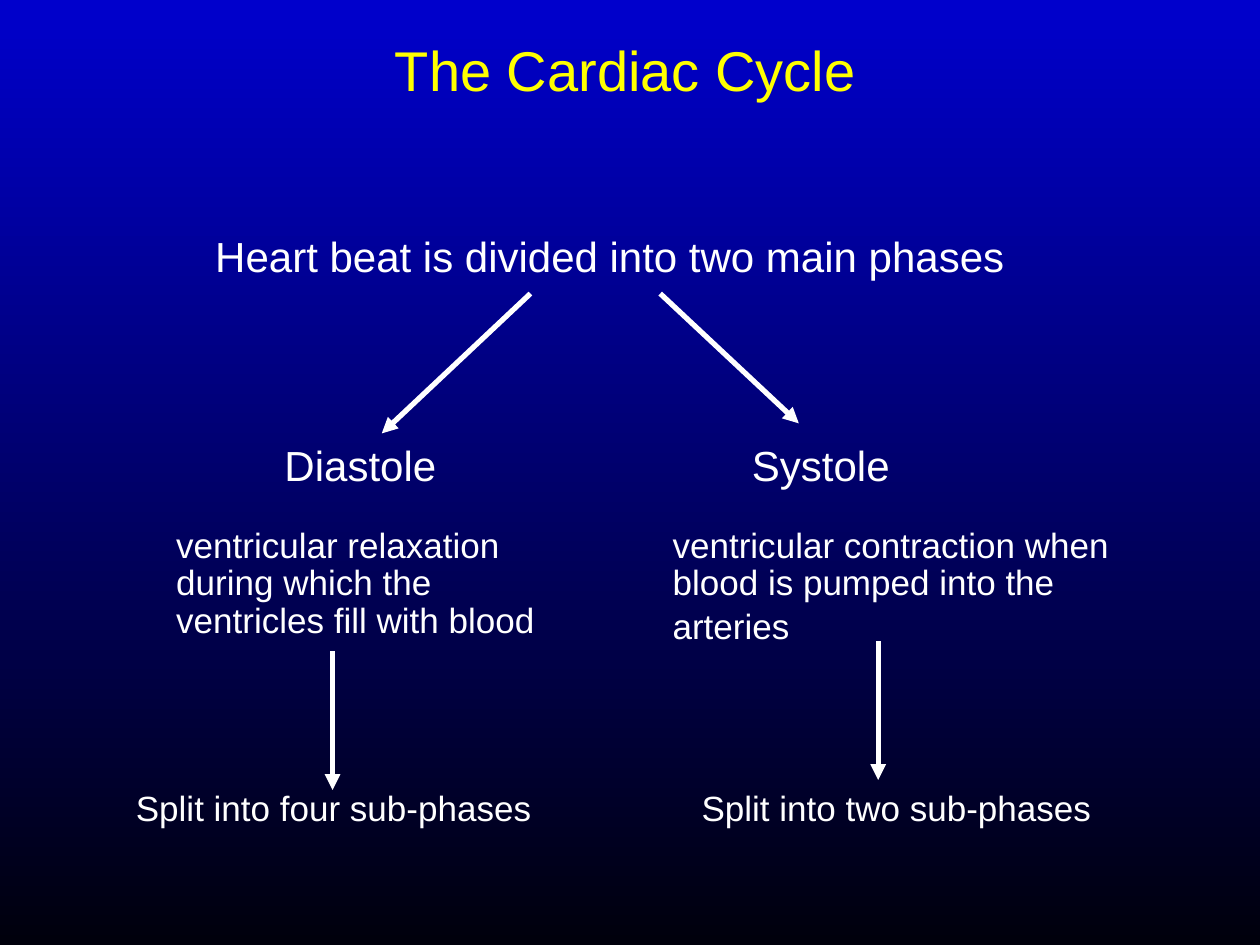
from dataclasses import dataclass

from lxml import etree
from pptx import Presentation
from pptx.dml.color import RGBColor
from pptx.enum import shapes, text
from pptx.oxml import ns
from pptx.util import Inches, Pt

COLORS = {
    "top": "0000CC",
    "bottom": "00000C",
    "title": "FFFF00",
    "body": "FFFFFF",
}
FRAME_FORMAT = {"word_wrap": True, "auto_size": text.MSO_AUTO_SIZE.NONE}


@dataclass
class Label:
    words: str
    left: float
    top: float
    width: float
    height: float
    size: int = 20
    color: str = "body"
    spacing: float = 1.0
    align: text.PP_ALIGN = text.PP_ALIGN.LEFT
    anchor: text.MSO_ANCHOR = text.MSO_ANCHOR.TOP
    tail_space: bool = False


@dataclass
class Arrow:
    x1: float
    y1: float
    x2: float
    y2: float


LABELS = [
    Label("The Cardiac Cycle", 0.2, 0.13, 9.53, 0.83, 32, "title",
          align=text.PP_ALIGN.CENTER, anchor=text.MSO_ANCHOR.MIDDLE),
    Label("Heart beat is divided into two main phases", 1.61, 1.78, 7.01, 0.5, 24),
    Label("Diastole", 2.16, 3.44, 1.5, 0.5, 24),
    Label("Systole", 5.87, 3.44, 1.57, 0.5, 24),
    Label("ventricular relaxation during which the ventricles fill with blood",
          1.3, 4.14, 3.15, 1.5, spacing=0.9),
    Label("ventricular contraction when blood is pumped into the arteries",
          5.24, 4.14, 3.86, 1.66, spacing=0.9, tail_space=True),
    Label("Split into four sub-phases", 0.98, 6.19, 4.09, 0.43),
    Label("Split into two sub-phases", 5.47, 6.19, 3.86, 0.43),
]
ARROWS = [
    Arrow(4.21, 2.33, 3.03, 3.44),
    Arrow(5.24, 2.33, 6.34, 3.36),
    Arrow(2.64, 5.17, 2.64, 6.27),
    Arrow(6.97, 5.09, 6.97, 6.19),
]


def rgb(name: str) -> RGBColor:
    return RGBColor.from_string(COLORS[name])


def set_format(target, values: dict) -> None:
    for key, value in values.items():
        setattr(target, key, value)


def add_run(p, words: str, font: str, size: int, color: str) -> None:
    r = p.add_run()
    r.text = words
    set_format(r.font, {"name": font, "size": Pt(size)})
    r.font.color.rgb = rgb(color)


def add_label(s, label: Label) -> None:
    sp = s.shapes.add_textbox(Inches(label.left), Inches(label.top),
                              Inches(label.width), Inches(label.height))
    tf = sp.text_frame
    set_format(tf, FRAME_FORMAT | {"vertical_anchor": label.anchor})
    p = tf.paragraphs[0]
    set_format(p, {"alignment": label.align, "line_spacing": label.spacing})
    add_run(p, label.words, "Arial", label.size, label.color)
    if label.tail_space:
        add_run(p, " ", "Times New Roman", 24, label.color)


def add_arrow(s, arrow: Arrow) -> None:
    sp = s.shapes.add_connector(shapes.MSO_CONNECTOR.STRAIGHT,
                                Inches(arrow.x1), Inches(arrow.y1),
                                Inches(arrow.x2), Inches(arrow.y2))
    sp.line.width = Pt(3)
    sp.line.color.rgb = rgb("body")
    etree.SubElement(sp.line._get_or_add_ln(), ns.qn("a:tailEnd"), type="triangle")
    etree.SubElement(sp._element.spPr, ns.qn("a:effectLst"))


def set_background(s) -> None:
    fill = s.background.fill
    fill.gradient()
    fill.gradient_angle = 270
    for stop, name in zip(fill.gradient_stops, ("top", "bottom")):
        stop.color.rgb = rgb(name)


def main() -> None:
    prs = Presentation()
    set_format(prs, {"slide_width": Inches(10), "slide_height": Inches(7.5)})
    s = prs.slides.add_slide(prs.slide_layouts[6])
    set_background(s)
    for label in LABELS:
        add_label(s, label)
    for arrow in ARROWS:
        add_arrow(s, arrow)
    prs.save("out.pptx")


if __name__ == "__main__":
    main()
